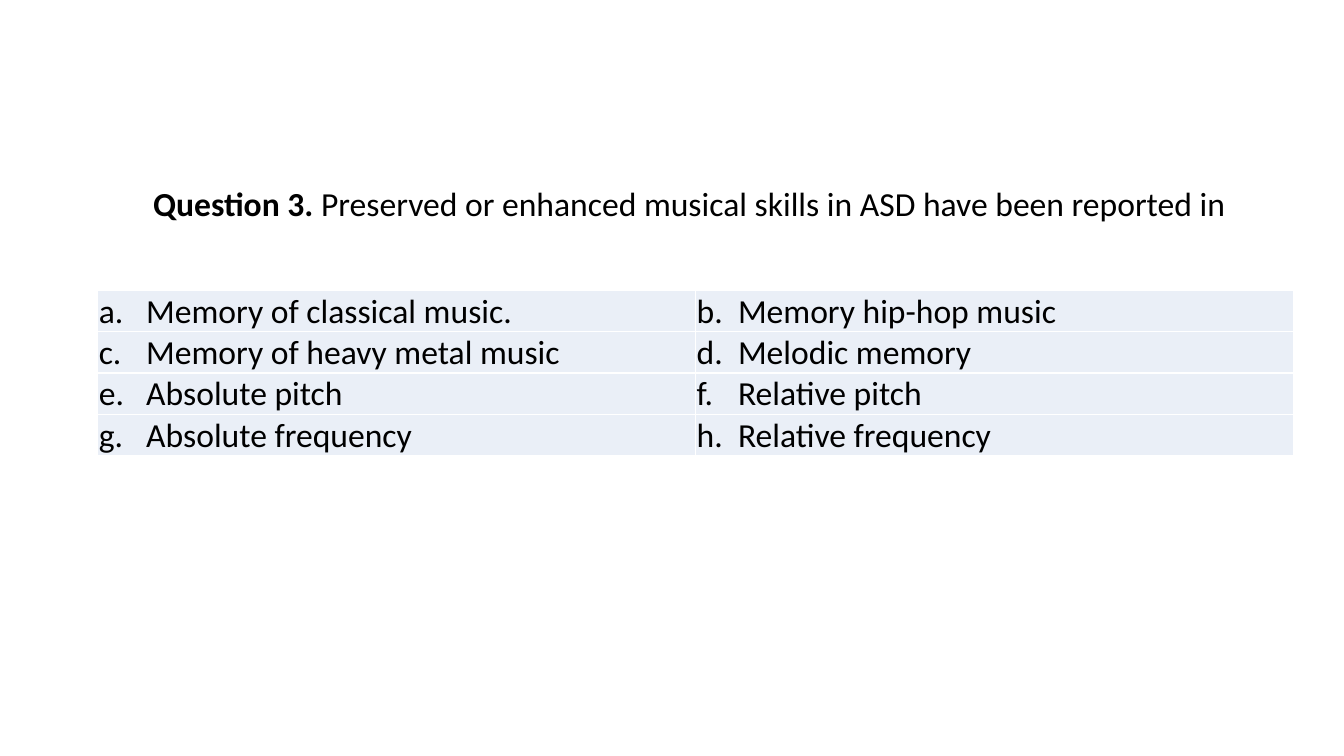
from dataclasses import dataclass

from lxml.etree import SubElement as Sub
from pptx import Presentation
from pptx.dml.color import RGBColor as Rgb
from pptx.enum.text import MSO_ANCHOR as Anchor, MSO_AUTO_SIZE as Fit
from pptx.oxml.ns import qn
from pptx.util import Inches, Pt

HUES = {"ink": "000000", "cell": "EAEFF7", "rule": "FFFFFF"}


@dataclass
class Choice:
    mark: str
    text: str


CHOICES = [
    Choice("a.", "Memory of classical music."),
    Choice("b.", "Memory hip-hop music"),
    Choice("c.", "Memory of heavy metal music"),
    Choice("d.", "Melodic memory"),
    Choice("e.", "Absolute pitch"),
    Choice("f.", "Relative pitch"),
    Choice("g.", "Absolute frequency"),
    Choice("h.", "Relative frequency"),
]
INDENTS = [0.47, 0.41]
COLS = len(INDENTS)
ROWS = len(CHOICES) // COLS


def style(para) -> None:
    para.font.name = "Calibri"
    para.font.size = Pt(24)
    para.font.color.rgb = Rgb.from_string(HUES["ink"])


def add_question(slide, label: str, text: str) -> None:
    box = slide.shapes.add_textbox(Inches(1.42), Inches(1.74), Inches(10.96), Inches(0.53))
    frame = box.text_frame
    frame.word_wrap = True
    frame.auto_size = Fit.SHAPE_TO_FIT_TEXT
    para = frame.paragraphs[0]
    para.line_spacing = 1.07
    para.space_after = Pt(6)
    style(para)
    head = para.add_run()
    head.text = label
    head.font.bold = True
    para.add_run().text = text


def add_rules(cell) -> None:
    props = cell._tc.get_or_add_tcPr()
    for side in ("lnL", "lnR", "lnT", "lnB"):
        line = Sub(props, qn(f"a:{side}"), w=str(Pt(1)))
        Sub(Sub(line, qn("a:solidFill")), qn("a:srgbClr"), val=HUES["rule"])


def fill_cell(cell, choice: Choice, indent: float) -> None:
    cell.margin_left = cell.margin_right = cell.margin_top = Inches(0.01)
    cell.margin_bottom = 0
    cell.vertical_anchor = Anchor.MIDDLE
    add_rules(cell)
    cell.fill.solid()
    cell.fill.fore_color.rgb = Rgb.from_string(HUES["cell"])
    para = cell.text_frame.paragraphs[0]
    para.text = f"{choice.mark}\t{choice.text}"
    style(para)
    props = para._p.get_or_add_pPr()
    props.set("marL", str(Inches(indent)))
    props.set("indent", str(-Inches(indent)))


def add_choices(slide) -> None:
    frame = slide.shapes.add_table(
        ROWS, COLS, Inches(0.97), Inches(2.88), Inches(11.86), Inches(0.41 * ROWS)
    )
    table = frame.table
    table.first_row = table.horz_banding = False
    for i, choice in enumerate(CHOICES):
        row, col = divmod(i, COLS)
        fill_cell(table.cell(row, col), choice, INDENTS[col])


def main() -> None:
    deck = Presentation()
    deck.slide_width, deck.slide_height = Inches(13.33), Inches(7.5)
    slide = deck.slides.add_slide(deck.slide_layouts[6])
    add_question(
        slide,
        "Question 3.",
        " Preserved or enhanced musical skills in ASD have been reported in",
    )
    add_choices(slide)
    deck.save("out.pptx")


if __name__ == "__main__":
    main()
